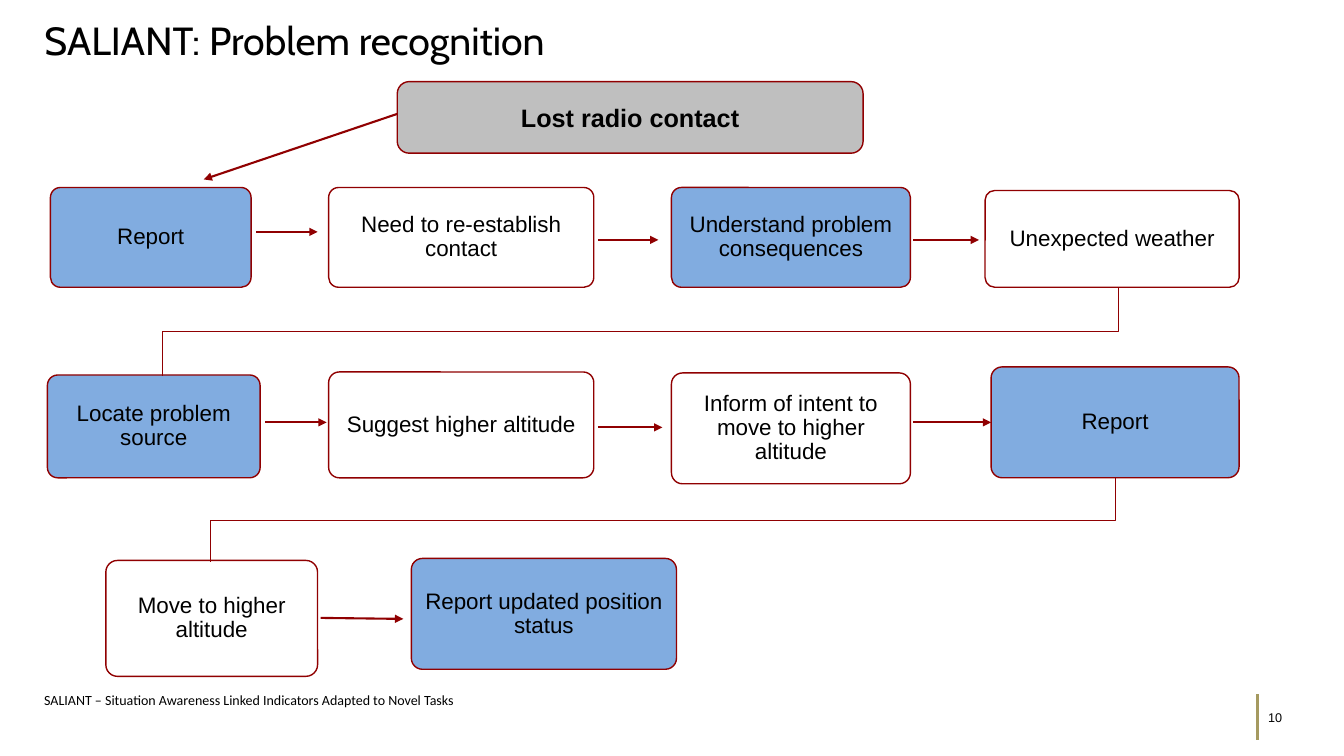
"""Build the SALIANT problem recognition flow slide."""
from lxml import etree
from pptx import Presentation
from pptx.dml.color import RGBColor
from pptx.enum.shapes import MSO_CONNECTOR, MSO_SHAPE
from pptx.enum.text import MSO_ANCHOR, MSO_AUTO_SIZE, PP_ALIGN
from pptx.oxml.ns import qn
from pptx.util import Inches, Pt

STRAIGHT, ELBOW = MSO_CONNECTOR.STRAIGHT, MSO_CONNECTOR.ELBOW
ROUNDED = MSO_SHAPE.ROUNDED_RECTANGLE
MIDDLE, TOP = MSO_ANCHOR.MIDDLE, MSO_ANCHOR.TOP
LEFT, CENTER = PP_ALIGN.LEFT, PP_ALIGN.CENTER
NO_FIT = MSO_AUTO_SIZE.NONE
RED, BLUE, WHITE, GREY = "900001", "81ACE0", "FFFFFF", "BFBFBF"
BLACK, GOLD = "000000", "A59A60"


def write(sp, text, size, font="Arial", align=LEFT, anchor=MIDDLE, bold=False):
    tf = sp.text_frame
    tf.text = text
    tf.word_wrap = True
    tf.auto_size = NO_FIT
    tf.vertical_anchor = anchor
    p = tf.paragraphs[0]
    p.alignment = align
    f = p.runs[0].font
    f.name, f.size, f.bold = font, Pt(size), bold
    f.color.rgb = RGBColor.from_string(BLACK)
    return p


def connect(kind, x1, y1, x2, y2, color, width, arrow=False):
    cxn = slide.shapes.add_connector(
        kind, Inches(x1), Inches(y1), Inches(x2), Inches(y2))
    cxn.line.color.rgb = RGBColor.from_string(color)
    cxn.line.width = Pt(width)
    if arrow:
        etree.SubElement(cxn.line._get_or_add_ln(), qn("a:tailEnd"), type="triangle")
    etree.SubElement(cxn._element.spPr, qn("a:effectLst"))
    return cxn


prs = Presentation()
prs.slide_width, prs.slide_height = Inches(13.33), Inches(7.5)
slide = prs.slides.add_slide(prs.slide_layouts[5])

title = slide.shapes.title
title.left, title.top = Inches(0.34), Inches(0.1)
title.width, title.height = Inches(12.65), Inches(0.6)
write(title, "SALIANT: Problem recognition", 28, "Cabin")

note = slide.shapes.add_textbox(Inches(0.34), Inches(6.81), Inches(10.88), Inches(0.6))
write(note, "SALIANT – Situation Awareness Linked Indicators Adapted to Novel Tasks",
      10, "Calibri", anchor=TOP)
number = slide.shapes.add_textbox(Inches(12.48), Inches(6.98), Inches(0.52), Inches(0.27))
write(number, "10", 9)
connect(STRAIGHT, 12.47, 6.89, 12.47, 7.34, GOLD, 2)

steps = [
    ("Lost radio contact", 3.94, 0.81, 4.62, 0.71, GREY),
    ("Report", 0.5, 1.86, 1.99, 0.99, BLUE),
    ("Need to re-establish contact", 3.26, 1.86, 2.63, 0.99, WHITE),
    ("Understand problem consequences", 6.66, 1.86, 2.37, 0.99, BLUE),
    ("Unexpected weather", 9.77, 1.89, 2.52, 0.96, WHITE),
    ("Locate problem source", 0.47, 3.72, 2.11, 1.02, BLUE),
    ("Suggest higher altitude", 3.26, 3.69, 2.63, 1.05, WHITE),
    ("Inform of intent to move to higher altitude", 6.66, 3.7, 2.37, 1.1, WHITE),
    ("Report", 9.83, 3.64, 2.46, 1.1, BLUE),
    ("Move to higher altitude", 1.05, 5.56, 2.1, 1.15, WHITE),
    ("Report updated position status", 4.08, 5.54, 2.63, 1.1, BLUE),
]
boxes = []
for text, x, y, w, h, fill in steps:
    sp = slide.shapes.add_shape(ROUNDED, Inches(x), Inches(y), Inches(w), Inches(h))
    sp.shadow.inherit = False
    sp.fill.solid()
    sp.fill.fore_color.rgb = RGBColor.from_string(fill)
    sp.line.color.rgb = RGBColor.from_string(RED)
    sp.line.width = Pt(1)
    start = fill == GREY
    p = write(sp, text, 18 if start else 16, align=CENTER, bold=start)
    if not start:
        sp.adjustments[0] = 0.1
        p.line_spacing = 0.9
        sp.text_frame.margin_left = sp.text_frame.margin_right = Inches(0.08)
    boxes.append(sp)

arrows = [
    (3.94, 1.13, 2.02, 1.78),
    (2.54, 2.3, 3.15, 2.3),
    (5.93, 2.38, 6.53, 2.38),
    (9.06, 2.38, 9.71, 2.38),
    (2.63, 4.19, 3.24, 4.19),
    (5.93, 4.24, 6.57, 4.24),
    (3.18, 6.13, 4, 6.14),
    (9.06, 4.19, 9.83, 4.19),
]
for ends in arrows:
    cxn = connect(STRAIGHT, *ends, RED, 1.5, arrow=True)
cxn.end_connect(boxes[8], 1)

for x1, y1, x2, y2 in [(11.09, 2.85, 1.61, 3.73), (11.06, 4.74, 2.09, 5.58)]:
    cx, cy = (x1 + x2) / 2, (y1 + y2) / 2
    dx, dy = (y2 - y1) / 2, (x1 - x2) / 2
    cxn = connect(ELBOW, cx - dx, cy - dy, cx + dx, cy + dy, RED, 0.5)
    cxn._element.spPr.find(qn("a:xfrm")).set("rot", "5400000")

prs.save("out.pptx")
